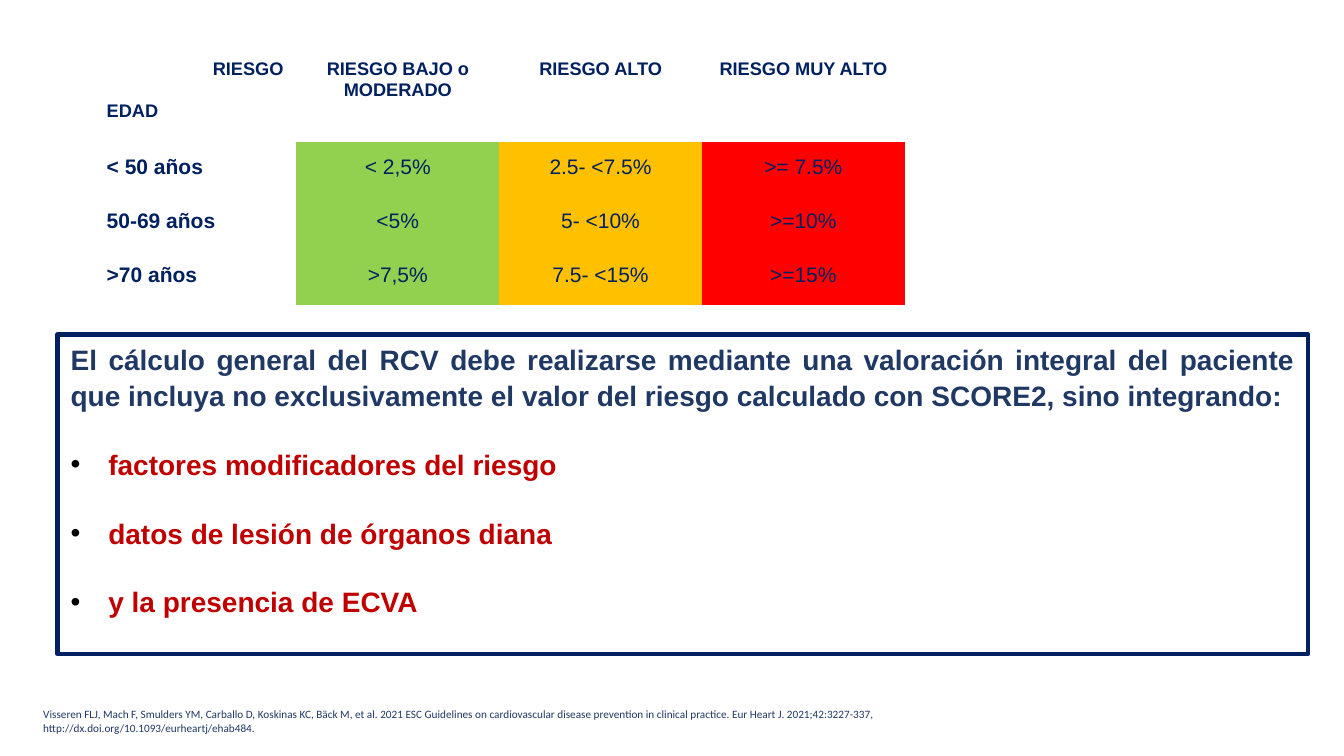
"""Build the slide on cardiovascular risk thresholds by age."""
from dataclasses import dataclass
from typing import Optional

from lxml import etree
from pptx import Presentation
from pptx import util as u
from pptx.dml import color as c
from pptx.enum import shapes, text
from pptx.oxml import ns

NAVY = c.RGBColor(0x00, 0x20, 0x60)
SLATE = c.RGBColor(0x1F, 0x38, 0x64)
CRIMSON = c.RGBColor(0xC0, 0x00, 0x00)
GREEN = c.RGBColor(0x92, 0xD0, 0x50)
AMBER = c.RGBColor(0xFF, 0xC0, 0x00)
RED = c.RGBColor(0xFF, 0x00, 0x00)

LEFT, CENTER, RIGHT, JUSTIFY = (
    text.PP_ALIGN.LEFT, text.PP_ALIGN.CENTER, text.PP_ALIGN.RIGHT, text.PP_ALIGN.JUSTIFY)
NO_GRID_STYLE = "{2D5ABB26-0587-4C30-8999-92F81FD0307C}"
INSET = u.Cm(0.33)


@dataclass(frozen=True)
class Line:
    """One paragraph and its format."""
    words: str
    size: float
    color: c.RGBColor = NAVY
    align: text.PP_ALIGN = LEFT
    bold: bool = True
    font: str = "Arial"
    before: float = 0
    spacing: float = 1.0
    bullet: bool = False


@dataclass(frozen=True)
class AgeRow:
    """Risk thresholds of one age group."""
    age: str
    limits: tuple[str, str, str]


HEADINGS = ("RIESGO BAJO o MODERADO", "RIESGO ALTO", "RIESGO MUY ALTO")
LEVEL_FILLS = (GREEN, AMBER, RED)
AGE_ROWS = (
    AgeRow("< 50 años", ("< 2,5%", "2.5- <7.5%", ">= 7.5%")),
    AgeRow("50-69 años", ("<5%", "5- <10%", ">=10%")),
    AgeRow(">70 años", (">7,5%", "7.5- <15%", ">=15%")),
)
ADVICE = ("El cálculo general del RCV debe realizarse mediante una valoración integral "
          "del paciente que incluya no exclusivamente el valor del riesgo calculado con "
          "SCORE2, sino integrando:")
FACTORS = ("factores modificadores del riesgo", "datos de lesión de órganos diana",
           "y la presencia de ECVA")
CITATION = ("Visseren FLJ, Mach F, Smulders YM, Carballo D, Koskinas KC, Bäck M, et al. "
            "2021 ESC Guidelines on cardiovascular disease prevention in clinical practice. "
            "Eur Heart J. 2021;42:3227-337, http://dx.doi.org/10.1093/eurheartj/ehab484.")


def set_all(target: object, values: dict) -> None:
    """Set every named attribute on the target."""
    for name, value in values.items():
        setattr(target, name, value)


def add_bullet(para) -> None:
    """Give a paragraph a black hanging bullet."""
    properties = para._p.get_or_add_pPr()
    properties.set("marL", str(u.Cm(0.95)))
    properties.set("indent", str(-u.Cm(0.95)))
    tint = etree.SubElement(properties, ns.qn("a:buClr"))
    etree.SubElement(tint, ns.qn("a:srgbClr"), val="000000")
    etree.SubElement(properties, ns.qn("a:buFont"), typeface="Arial")
    etree.SubElement(properties, ns.qn("a:buChar"), char="•")


def write(frame, lines: list[Line]) -> None:
    """Fill a text frame with formatted lines."""
    for index, line in enumerate(lines):
        para = frame.add_paragraph() if index else frame.paragraphs[0]
        if line.bullet:
            add_bullet(para)
        set_all(para, {"alignment": line.align, "line_spacing": line.spacing})
        if line.before:
            para.space_before = u.Pt(line.before)
        span = para.add_run()
        span.text = line.words
        set_all(span.font, {"name": line.font, "size": u.Pt(line.size), "bold": line.bold})
        span.font.color.rgb = line.color


def fill_cell(cell, lines: list[Line], fill: Optional[c.RGBColor] = None) -> None:
    """Write one table cell and colour it."""
    set_all(cell, {f"margin_{side}": INSET for side in ("left", "right", "top", "bottom")})
    if fill is None:
        cell.fill.background()
    else:
        cell.fill.solid()
        cell.fill.fore_color.rgb = fill
    write(cell.text_frame, lines)


def add_risk_table(page) -> None:
    """Add the table of risk levels by age."""
    frame = page.shapes.add_table(len(AGE_ROWS) + 1, len(HEADINGS) + 1, u.Cm(2.36), u.Cm(1.17),
                                  u.Cm(20.44), u.Cm(6.52))
    for style in frame.element.iter(ns.qn("a:tableStyleId")):
        style.text = NO_GRID_STYLE
    table = frame.table
    set_all(table, {"first_row": False, "horz_banding": False})
    for column in table.columns:
        column.width = u.Cm(5.11)
    for index, row in enumerate(table.rows):
        row.height = u.Cm(1.37 if index else 2.41)
    fill_cell(table.cell(0, 0), [Line("RIESGO", 13, align=RIGHT), Line("EDAD", 13, before=15)])
    for column, heading in enumerate(HEADINGS, 1):
        fill_cell(table.cell(0, column), [Line(heading, 13, align=CENTER)])
    for index, group in enumerate(AGE_ROWS, 1):
        fill_cell(table.cell(index, 0), [Line(group.age, 15)])
        for column, (limit, fill) in enumerate(zip(group.limits, LEVEL_FILLS), 1):
            fill_cell(table.cell(index, column),
                      [Line(limit, 15, align=CENTER, bold=False)], fill)


def add_advice(page) -> None:
    """Add the framed advice with its factors."""
    box = page.shapes.add_shape(shapes.MSO_SHAPE.RECTANGLE, u.Cm(1.45), u.Cm(8.43),
                                u.Cm(31.52), u.Cm(8.05))
    box.shadow.inherit = False
    box.fill.background()
    box.line.color.rgb = NAVY
    box.line.width = u.Pt(3)
    set_all(box.text_frame, {
        "word_wrap": True, "vertical_anchor": text.MSO_ANCHOR.TOP,
        "margin_left": INSET, "margin_right": INSET,
        "margin_top": u.Cm(0.17), "margin_bottom": u.Cm(0.17)})
    factors = [Line(factor, 20, CRIMSON, JUSTIFY, before=24, spacing=1.05, bullet=True)
               for factor in FACTORS]
    write(box.text_frame, [Line(ADVICE, 20, SLATE, JUSTIFY, spacing=1.05), *factors])


def add_citation(page) -> None:
    """Add the reference at the foot."""
    box = page.shapes.add_textbox(u.Cm(0.76), u.Cm(17.5), u.Cm(26.64), u.Cm(1.37))
    set_all(box.text_frame, {"word_wrap": True, "margin_left": INSET, "margin_right": INSET,
                             "margin_top": INSET, "margin_bottom": INSET})
    write(box.text_frame, [Line(CITATION, 8, SLATE, bold=False, font="Calibri")])


def main() -> None:
    """Build and save the deck."""
    deck = Presentation()
    set_all(deck, {"slide_width": u.Cm(33.87), "slide_height": u.Cm(19.05)})
    page = deck.slides.add_slide(deck.slide_layouts[6])
    add_advice(page)
    add_risk_table(page)
    add_citation(page)
    deck.save("out.pptx")


if __name__ == "__main__":
    main()
